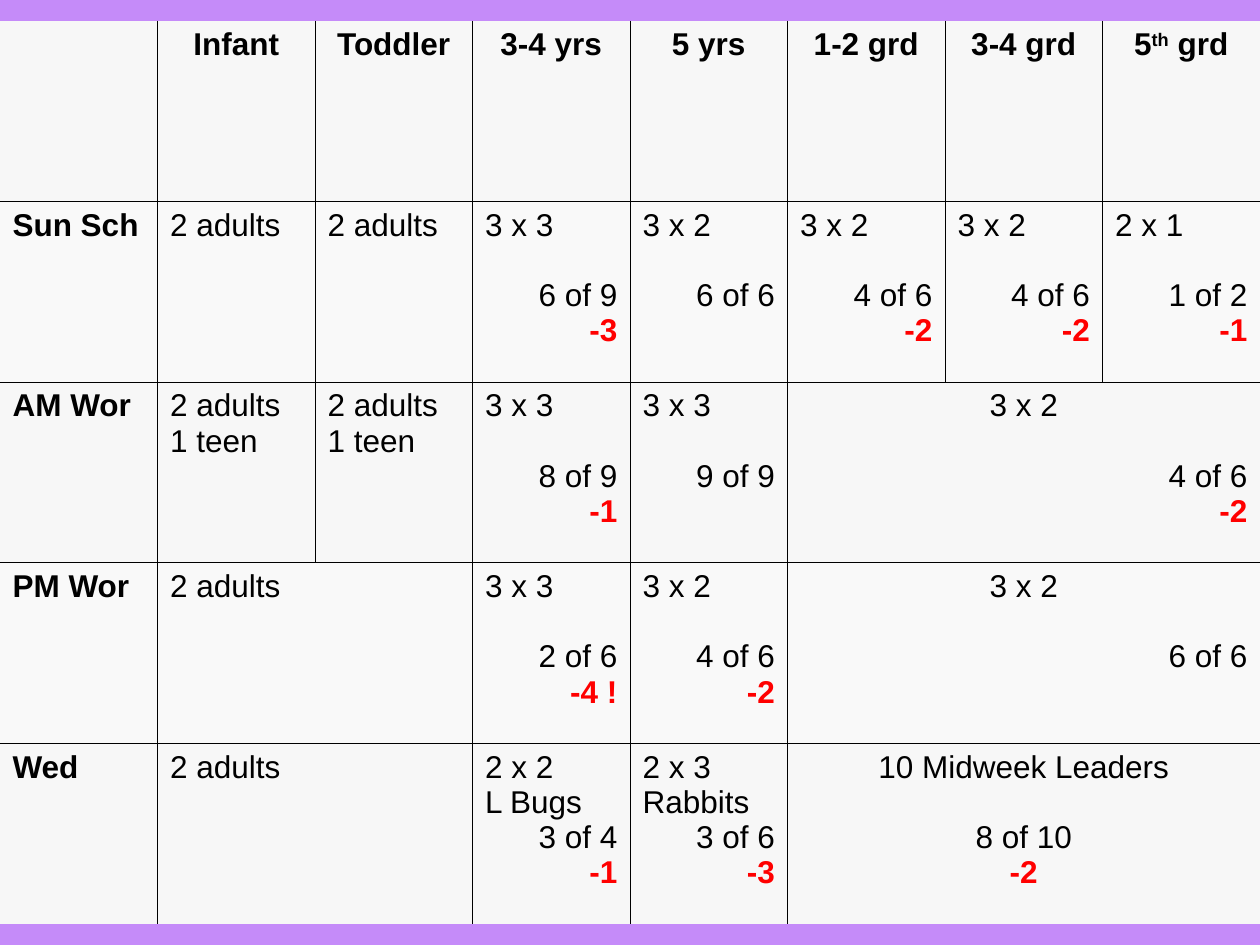
from lxml.etree import SubElement
from pptx import Presentation
from pptx.dml.color import RGBColor
from pptx.enum.text import PP_ALIGN
from pptx.oxml.ns import qn
from pptx.util import Emu, Pt

BACKGROUND = RGBColor(0xC5, 0x8B, 0xF9)
ROW_FILLS = [RGBColor(0xF7, 0xF7, 0xF7), RGBColor(0xF9, 0xF9, 0xF9)]
BLACK = RGBColor(0, 0, 0)
RED = RGBColor(0xFF, 0, 0)

LEFT, CENTER, RIGHT = PP_ALIGN.LEFT, PP_ALIGN.CENTER, PP_ALIGN.RIGHT
GROUPS = ["", "Infant", "Toddler", "3-4 yrs", "5 yrs", "1-2 grd", "3-4 grd", "5th grd"]

# Each entry is (columns spanned, alignment of first lines, alignment of counts, lines).
SERVICES = {
    "Sun Sch": [
        (1, LEFT, RIGHT, ["2 adults"]),
        (1, LEFT, RIGHT, ["2 adults"]),
        (1, LEFT, RIGHT, ["3 x 3", "6 of 9", "-3"]),
        (1, LEFT, RIGHT, ["3 x 2", "6 of 6"]),
        (1, LEFT, RIGHT, ["3 x 2", "4 of 6", "-2"]),
        (1, LEFT, RIGHT, ["3 x 2", "4 of 6", "-2"]),
        (1, LEFT, RIGHT, ["2 x 1", "1 of 2", "-1"]),
    ],
    "AM Wor": [
        (1, LEFT, RIGHT, ["2 adults", "1 teen"]),
        (1, LEFT, RIGHT, ["2 adults", "1 teen"]),
        (1, LEFT, RIGHT, ["3 x 3", "8 of 9", "-1"]),
        (1, LEFT, RIGHT, ["3 x 3", "9 of 9"]),
        (3, CENTER, RIGHT, ["3 x 2", "4 of 6", "-2"]),
    ],
    "PM Wor": [
        (2, LEFT, RIGHT, ["2 adults"]),
        (1, LEFT, RIGHT, ["3 x 3", "2 of 6", "-4 !"]),
        (1, LEFT, RIGHT, ["3 x 2", "4 of 6", "-2"]),
        (3, CENTER, RIGHT, ["3 x 2", "6 of 6"]),
    ],
    "Wed": [
        (2, LEFT, RIGHT, ["2 adults"]),
        (1, LEFT, RIGHT, ["2 x 2", "L Bugs", "3 of 4", "-1"]),
        (1, LEFT, RIGHT, ["2 x 3", "Rabbits", "3 of 6", "-3"]),
        (3, CENTER, CENTER, ["10 Midweek Leaders", "8 of 10", "-2"]),
    ],
}


def px(length):
    return Emu(round(length * 914400 / 126))


def format_run(run, bold=False, color=BLACK):
    run.font.name = "Arial"
    run.font.size = Pt(18)
    run.font.bold = bold
    run.font.color.rgb = color


def write_heading(cell, text, alignment):
    """Write a bold heading, with the ordinal ending raised."""
    paragraph = cell.text_frame.paragraphs[0]
    paragraph.alignment = alignment
    for part in filter(None, text.partition("th")):
        run = paragraph.add_run()
        run.text = part
        format_run(run, bold=True)
        if part == "th":
            run._r.get_or_add_rPr().set("baseline", "30000")


def write_staffing(cell, first_alignment, count_alignment, lines):
    """Write the need, then the filled places one line lower, then the shortage in red."""
    cell.text_frame.text = "\n".join(lines)
    for index, paragraph in enumerate(cell.text_frame.paragraphs):
        is_shortage = paragraph.text.startswith("-")
        is_count = " of " in paragraph.text
        paragraph.alignment = count_alignment if is_count or is_shortage else first_alignment
        if is_count and index == 1:
            paragraph.space_before = Pt(20)
        format_run(paragraph.runs[0], is_shortage, RED if is_shortage else BLACK)


def draw_borders(cell, inner_edges):
    """Draw a thin line on the inner edges and none on the outside of the table."""
    properties = cell._tc.get_or_add_tcPr()
    for edge, is_inner in inner_edges.items():
        line = SubElement(properties, qn(f"a:ln{edge}"), w=str(Pt(0.5)))
        if is_inner:
            fill = SubElement(line, qn("a:solidFill"))
            SubElement(fill, qn("a:srgbClr"), val=str(BLACK))
        else:
            SubElement(line, qn("a:noFill"))


def add_schedule(slide, left, top, width, height):
    row_count, column_count = len(SERVICES) + 1, len(GROUPS)
    table = slide.shapes.add_table(
        row_count, column_count, px(left), px(top), px(width), px(height)
    ).table
    table.first_row = False
    table.horz_banding = False
    for column in table.columns:
        column.width = px(width / column_count)
    for row in table.rows:
        row.height = px(height / row_count)

    for r in range(row_count):
        for c in range(column_count):
            cell = table.cell(r, c)
            draw_borders(cell, {"L": c > 0, "R": c < column_count - 1,
                                "T": r > 0, "B": r < row_count - 1})
            cell.fill.solid()
            cell.fill.fore_color.rgb = ROW_FILLS[r % 2]

    for c, group in enumerate(GROUPS):
        write_heading(table.cell(0, c), group, CENTER)
    for r, (service, entries) in enumerate(SERVICES.items(), start=1):
        write_heading(table.cell(r, 0), service, LEFT)
        c = 1
        for span, first_alignment, count_alignment, lines in entries:
            cell = table.cell(r, c)
            if span > 1:
                cell.merge(table.cell(r, c + span - 1))
            write_staffing(cell, first_alignment, count_alignment, lines)
            c += span


def main():
    presentation = Presentation()
    presentation.slide_width, presentation.slide_height = px(1260), px(945)
    slide = presentation.slides.add_slide(presentation.slide_layouts[6])
    slide.background.fill.solid()
    slide.background.fill.fore_color.rgb = BACKGROUND
    add_schedule(slide, 0, 21, 1260, 903)
    presentation.save("out.pptx")


if __name__ == "__main__":
    main()
